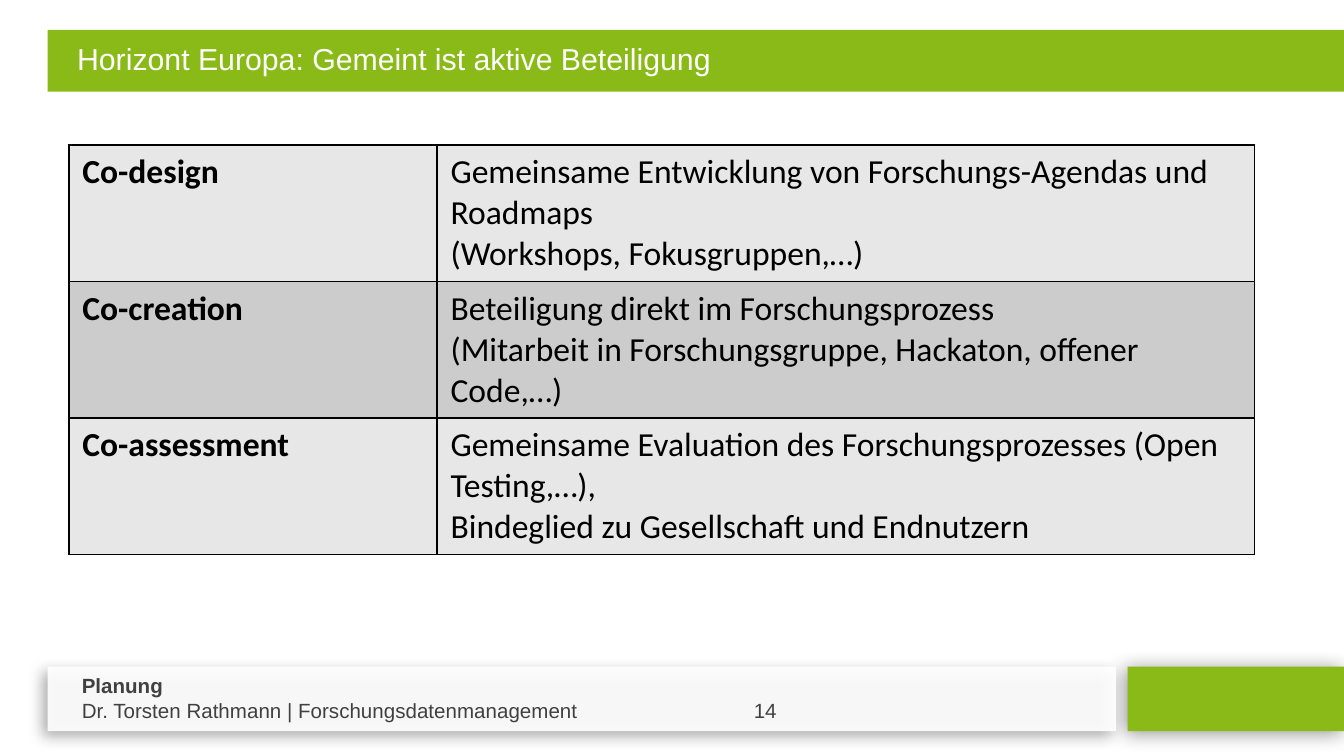
from dataclasses import dataclass
from typing import Optional

from lxml.etree import SubElement
from pptx import Presentation
from pptx.dml.color import RGBColor
from pptx.enum.shapes import MSO_SHAPE as Preset
from pptx.oxml.ns import qn
from pptx.util import Inches, Length, Pt

GREEN = RGBColor(0x89, 0xBA, 0x17)
WHITE = RGBColor(0xFF, 0xFF, 0xFF)
BLACK = RGBColor(0x00, 0x00, 0x00)
DARK_GRAY = RGBColor(0x40, 0x40, 0x40)
ROW_FILLS = (RGBColor(0xE7, 0xE7, 0xE7), RGBColor(0xCC, 0xCC, 0xCC))

GRID_COLUMNS, GRID_ROWS = 100, 56.25
UNITS_PER_INCH = 10


@dataclass(frozen=True)
class Area:
    column: float
    row: float
    columns: float
    rows: float

    def lengths(self) -> list[Length]:
        return [grid(value) for value in (self.column, self.row, self.columns, self.rows)]


@dataclass(frozen=True)
class Shadow:
    opacity: int
    blur: float
    distance: float
    angle: int


@dataclass(frozen=True)
class Bar:
    area: Area
    color: RGBColor
    opacity: int = 100
    shadow: Optional[Shadow] = None


@dataclass(frozen=True)
class Form:
    name: str
    description: tuple[str, ...]


BARS = (
    Bar(Area(83.9, 49.6, 16.1, 4.8), GREEN, shadow=Shadow(42, 10.8, 2, 142)),
    Bar(Area(3.55, 49.6, 79.5, 4.8), WHITE, 91, Shadow(34, 7.5, 4, 145)),
    Bar(Area(3.55, 2.22, 96.9, 4.6), GREEN),
)
TITLE_AREA = Area(3.55, 2.22, 96.9, 3.5)
FOOTER_AREA = Area(5.1, 49.6, 59.8, 4.7)
TABLE_AREA = Area(5.13, 10.8, 88.2, 30.48)
TABLE_COLUMNS = (27.4, 60.8)
FORMS = (
    Form("Co-design", ("Gemeinsame Entwicklung von Forschungs-Agendas und Roadmaps",
                       "(Workshops, Fokusgruppen,…)")),
    Form("Co-creation", ("Beteiligung direkt im Forschungsprozess",
                         "(Mitarbeit in Forschungsgruppe, Hackaton, offener Code,…)")),
    Form("Co-assessment", ("Gemeinsame Evaluation des Forschungsprozesses (Open Testing,…),",
                           "Bindeglied zu Gesellschaft und Endnutzern")),
)


def grid(units: float) -> Length:
    return Inches(units / UNITS_PER_INCH)


def add_alpha(color_element, opacity: int) -> None:
    SubElement(color_element, qn("a:alpha"), val=str(opacity * 1000))


def add_bar(slide, bar: Bar) -> None:
    shape = slide.shapes.add_shape(Preset.RECTANGLE, *bar.area.lengths())
    shape.fill.solid()
    shape.fill.fore_color.rgb = bar.color
    shape.line.fill.background()
    shape.shadow.inherit = False
    properties = shape._element.spPr
    if bar.opacity < 100:
        add_alpha(properties.find(qn("a:solidFill"))[0], bar.opacity)
    if bar.shadow:
        outer = SubElement(
            properties.find(qn("a:effectLst")), qn("a:outerShdw"),
            blurRad=str(Pt(bar.shadow.blur)), dist=str(Pt(bar.shadow.distance)),
            dir=str(bar.shadow.angle * 60000), algn="ctr", rotWithShape="0")
        add_alpha(SubElement(outer, qn("a:srgbClr"), val=str(BLACK)), bar.shadow.opacity)


def write_paragraph(frame, text: str, *, size: float, font: str, color: RGBColor,
                    bold: bool = False, first: bool = True,
                    margin: float = 0, tab: float = 0) -> None:
    paragraph = frame.paragraphs[0] if first else frame.add_paragraph()
    properties = paragraph._p.get_or_add_pPr()
    if margin:
        properties.set("marL", str(grid(margin)))
        properties.set("indent", "0")
    if tab:
        tabs = SubElement(properties, qn("a:tabLst"))
        SubElement(tabs, qn("a:tab"), pos=str(grid(tab)), algn="l")
    run = paragraph.add_run()
    run.text = text
    run.font.size = Pt(size)
    run.font.name = font
    run.font.bold = bold
    run.font.color.rgb = color


def add_text_frame(slide, area: Area):
    frame = slide.shapes.add_textbox(*area.lengths()).text_frame
    frame.word_wrap = True
    return frame


def add_title(slide) -> None:
    frame = add_text_frame(slide, TITLE_AREA)
    frame.margin_top = grid(0.8)
    write_paragraph(frame, "Horizont Europa: Gemeint ist aktive Beteiligung",
                    size=16.2, font="Arial", color=WHITE, margin=1.2)


def add_footer(slide) -> None:
    frame = add_text_frame(slide, FOOTER_AREA)
    style = {"size": 11, "font": "Arial", "color": DARK_GRAY}
    write_paragraph(frame, "Planung", bold=True, **style)
    write_paragraph(frame, "Dr. Torsten Rathmann | Forschungsdatenmanagement\t14",
                    first=False, tab=50, **style)


def style_cell(cell, color: RGBColor) -> None:
    properties = cell._tc.get_or_add_tcPr()
    for side in ("L", "R", "T", "B"):
        line = SubElement(properties, qn(f"a:ln{side}"), w=str(Pt(1)))
        fill = SubElement(line, qn("a:solidFill"))
        SubElement(fill, qn("a:srgbClr"), val=str(BLACK))
    cell.fill.solid()
    cell.fill.fore_color.rgb = color


def add_forms_table(slide) -> None:
    table = slide.shapes.add_table(
        len(FORMS), len(TABLE_COLUMNS), *TABLE_AREA.lengths()).table
    for column, width in zip(table.columns, TABLE_COLUMNS):
        column.width = grid(width)
    for index, form in enumerate(FORMS):
        for column, lines in enumerate(((form.name,), form.description)):
            cell = table.cell(index, column)
            style_cell(cell, ROW_FILLS[index % 2])
            for number, line in enumerate(lines):
                write_paragraph(cell.text_frame, line, size=18, font="Calibri",
                                color=BLACK, bold=column == 0, first=number == 0)


def main() -> None:
    presentation = Presentation()
    presentation.slide_width = grid(GRID_COLUMNS)
    presentation.slide_height = grid(GRID_ROWS)
    slide = presentation.slides.add_slide(presentation.slide_layouts[6])
    for bar in BARS:
        add_bar(slide, bar)
    add_footer(slide)
    add_title(slide)
    add_forms_table(slide)
    presentation.save("out.pptx")


if __name__ == "__main__":
    main()
